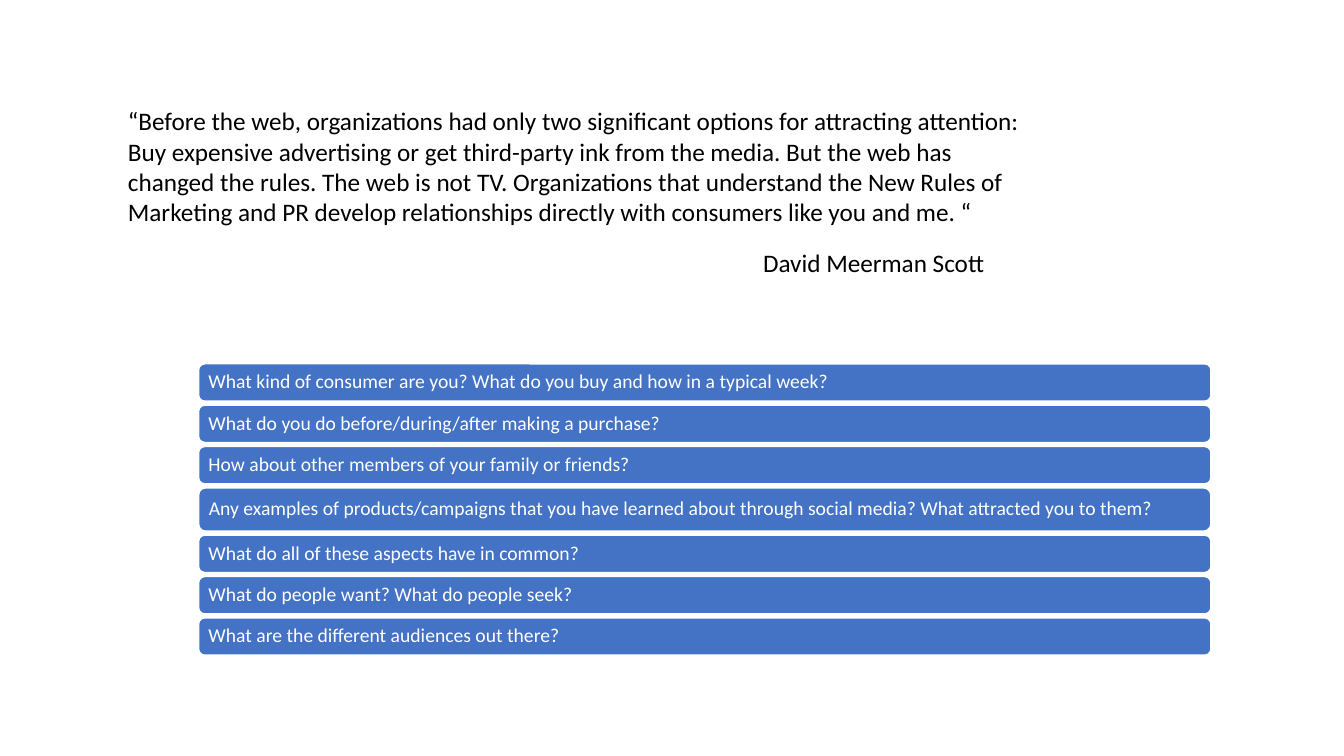
from pptx import Presentation
from pptx import util as u
from pptx.dml.color import RGBColor
from pptx.enum import shapes, text

# Content
QUOTE = (
    "“Before the web, organizations had only two significant options for "
    "attracting attention: Buy expensive advertising or get third-party ink "
    "from the media. But the web has changed the rules. The web is not TV. "
    "Organizations that understand the New Rules of Marketing and PR develop "
    "relationships directly with consumers like you and me. “"
)
AUTHOR = "David Meerman Scott"
BAR_HEIGHT, TALL_BAR_HEIGHT = 0.37, 0.43
QUESTIONS = [
    ("What kind of consumer are you? What do you buy and how in a typical week?", BAR_HEIGHT),
    ("What do you do before/during/after making a purchase?", BAR_HEIGHT),
    ("How about other members of your family or friends?", BAR_HEIGHT),
    ("Any examples of products/campaigns that you have learned about through "
     "social media? What attracted you to them?", TALL_BAR_HEIGHT),
    ("What do all of these aspects have in common?", BAR_HEIGHT),
    ("What do people want? What do people seek?", BAR_HEIGHT),
    ("What are the different audiences out there?", BAR_HEIGHT),
]

# Style and layout, in inches
BLACK = RGBColor(0x00, 0x00, 0x00)
WHITE = RGBColor(0xFF, 0xFF, 0xFF)
BLUE = RGBColor(0x44, 0x72, 0xC4)
FONT = "Calibri"
QUOTE_BOX = (1.17, 1.0, 9.25, 1.31)
AUTHOR_BOX = (7.47, 2.4, 4.9, 0.4)
BARS_LEFT, BARS_TOP, BARS_WIDTH = 1.97, 3.61, 10.04
BAR_GAP = 0.04
BAR_INSET = 0.08


def write(shape, wording, size, color):
    shape.text_frame.word_wrap = True
    paragraph = shape.text_frame.paragraphs[0]
    paragraph.alignment = text.PP_ALIGN.LEFT
    run = paragraph.add_run()
    run.text = wording
    run.font.name = FONT
    run.font.size = u.Pt(size)
    run.font.color.rgb = color
    return paragraph


def add_bar(slide, top, height, wording):
    bar = slide.shapes.add_shape(
        shapes.MSO_SHAPE.ROUNDED_RECTANGLE,
        *map(u.Inches, (BARS_LEFT, top, BARS_WIDTH, height)))
    bar.shadow.inherit = False
    bar.fill.solid()
    bar.fill.fore_color.rgb = BLUE
    bar.line.color.rgb = WHITE
    bar.line.width = u.Pt(1)
    frame = bar.text_frame
    frame.vertical_anchor = text.MSO_ANCHOR.MIDDLE
    frame.margin_left = frame.margin_right = u.Inches(BAR_INSET)
    frame.margin_top = frame.margin_bottom = u.Inches(BAR_INSET)
    write(bar, wording, 14, WHITE).line_spacing = 0.9


def main():
    presentation = Presentation()
    presentation.slide_width = u.Inches(13.33)
    presentation.slide_height = u.Inches(7.5)
    slide = presentation.slides.add_slide(presentation.slide_layouts[6])

    # Quote and its author
    for wording, box in ((QUOTE, QUOTE_BOX), (AUTHOR, AUTHOR_BOX)):
        write(slide.shapes.add_textbox(*map(u.Inches, box)), wording, 18, BLACK)

    # Stack of question bars
    top = BARS_TOP
    for question, height in QUESTIONS:
        add_bar(slide, top, height, question)
        top += height + BAR_GAP

    presentation.save("out.pptx")


if __name__ == "__main__":
    main()
